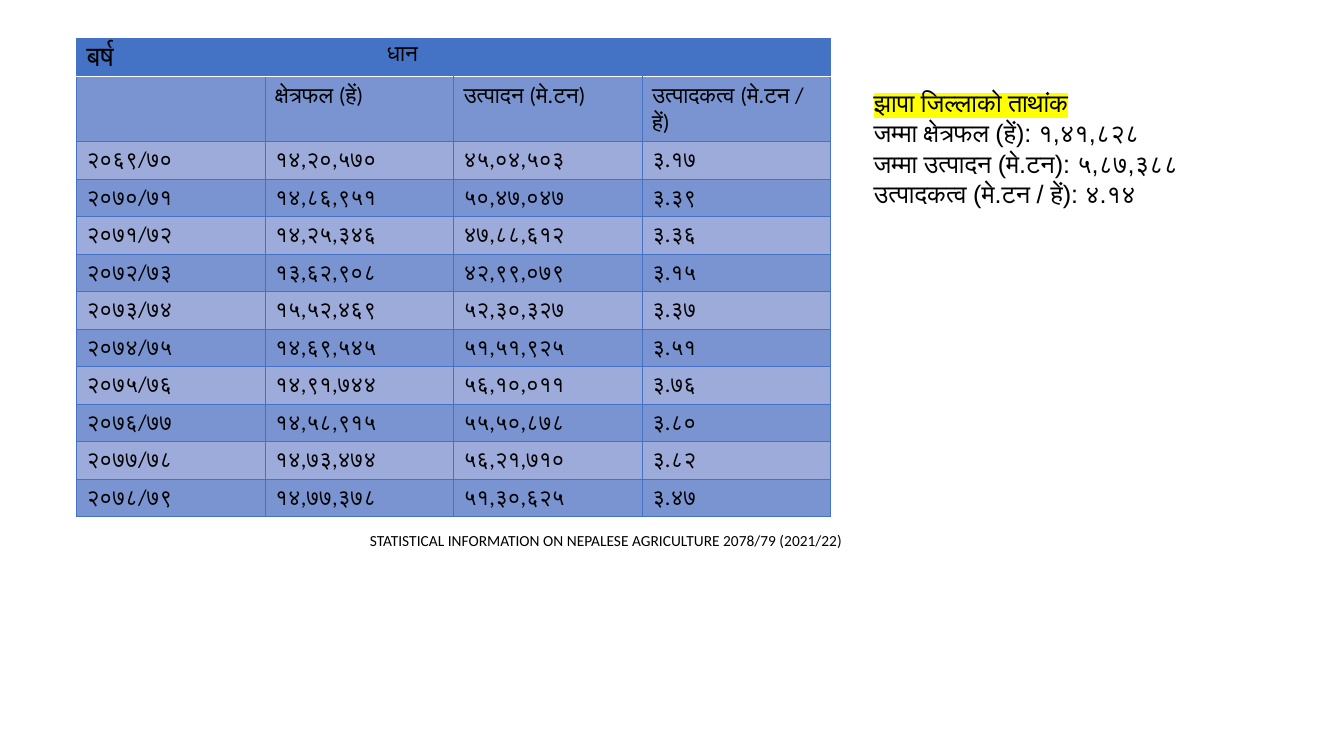
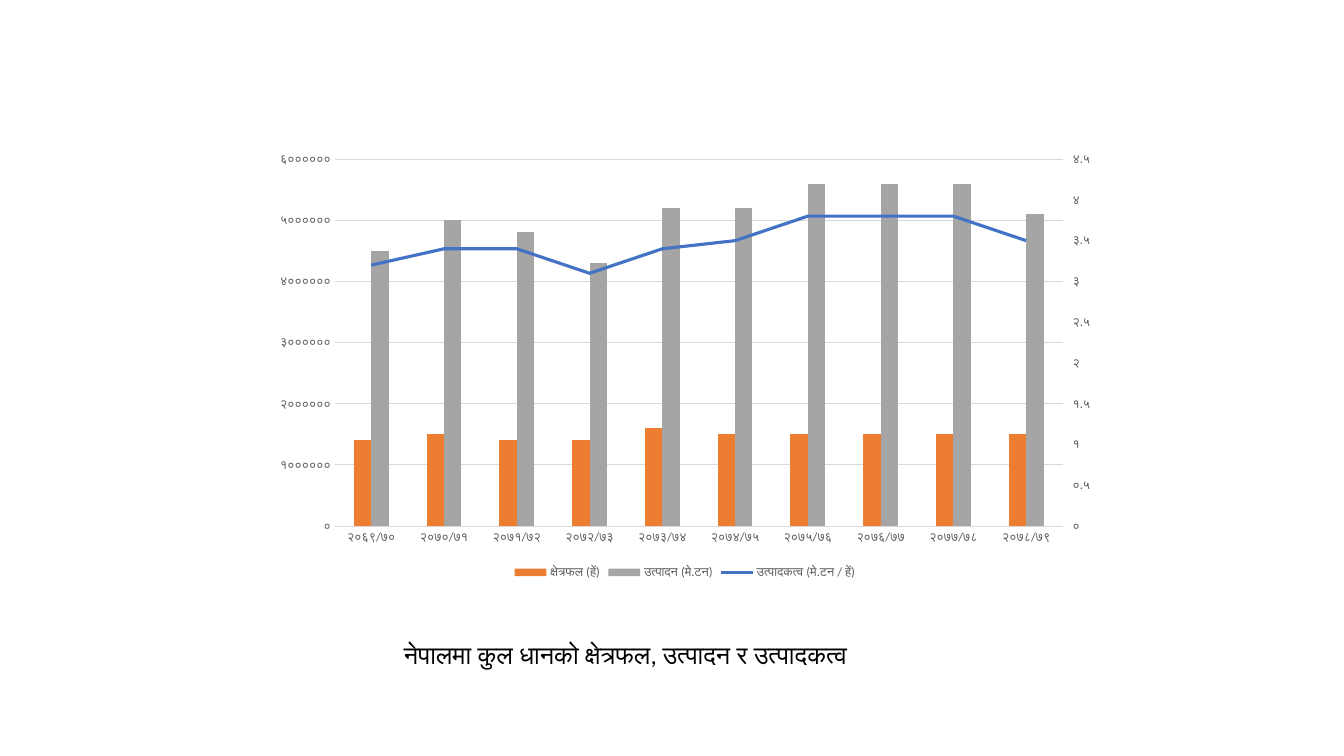
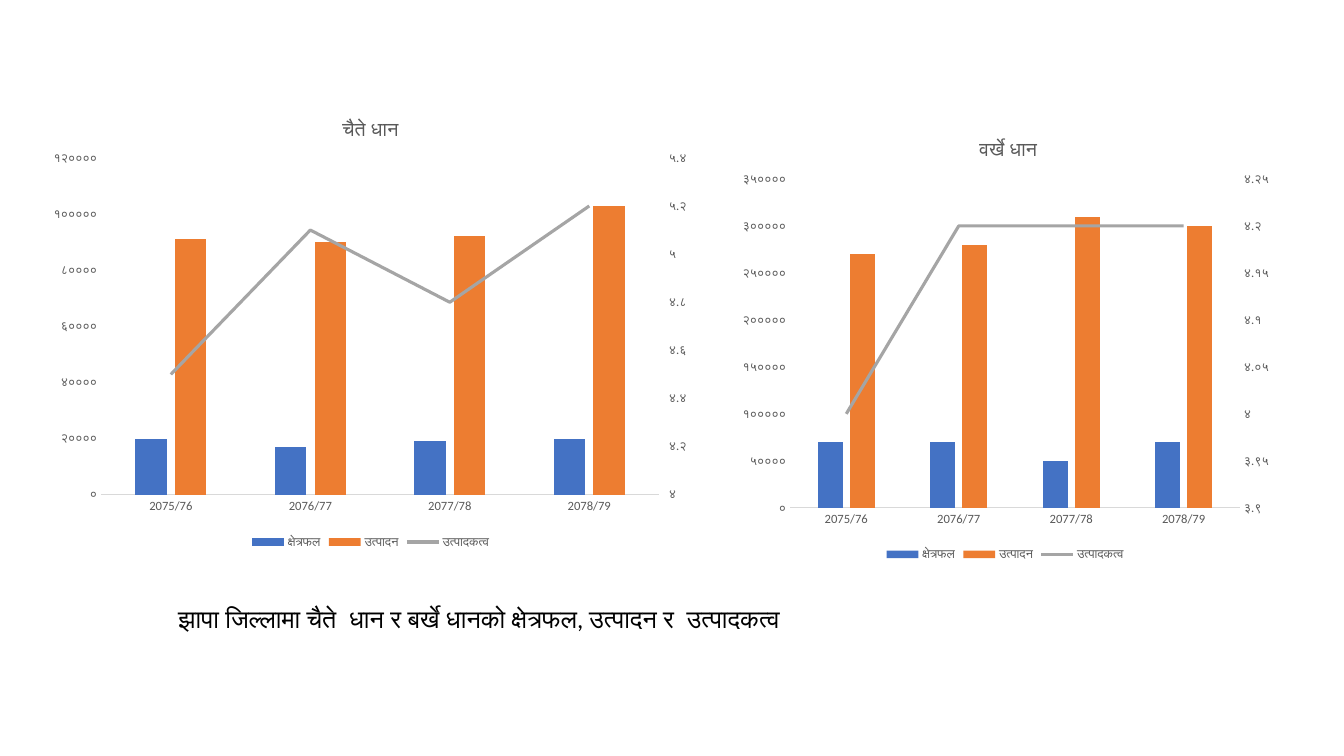
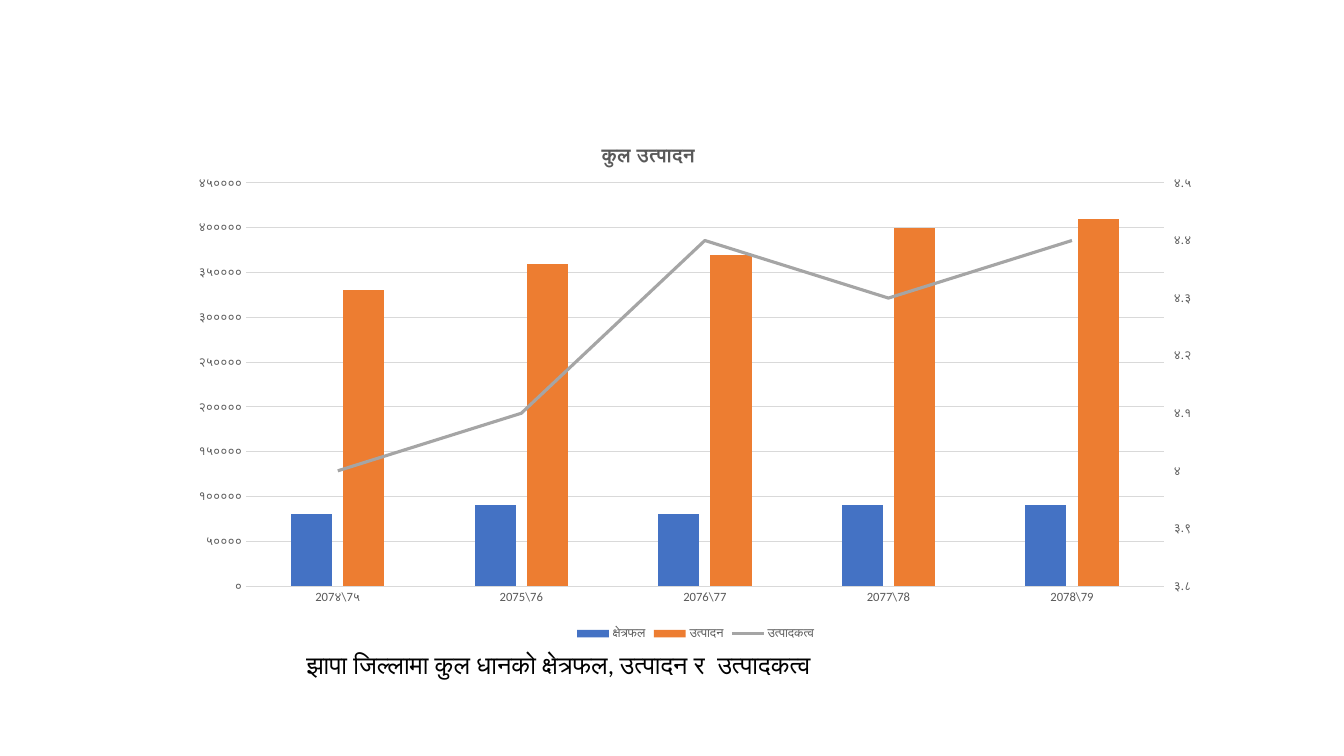
from lxml import etree
from pptx import Presentation
from pptx.chart.axis import ValueAxis
from pptx.chart.data import CategoryChartData
from pptx.dml.color import RGBColor
from pptx.enum.chart import (XL_CHART_TYPE, XL_LEGEND_POSITION, XL_MARKER_STYLE,
                             XL_TICK_LABEL_POSITION, XL_TICK_MARK)
from pptx.enum.text import MSO_AUTO_SIZE
from pptx.oxml import parse_xml
from pptx.oxml.ns import nsdecls, qn
from pptx.util import Cm, Pt

COLUMNS = XL_CHART_TYPE.COLUMN_CLUSTERED
LEGEND_BOTTOM = XL_LEGEND_POSITION.BOTTOM
NO_MARKER = XL_MARKER_STYLE.NONE
LABELS_BESIDE = XL_TICK_LABEL_POSITION.NEXT_TO_AXIS
TICK_NONE, TICK_OUT = XL_TICK_MARK.NONE, XL_TICK_MARK.OUTSIDE
GROW = MSO_AUTO_SIZE.SHAPE_TO_FIT_TEXT

COLORS = {
    "text": "000000", "label": "595959", "rule": "D9D9D9", "white": "FFFFFF",
    "highlight": "FFFF00", "blue": "4472C4", "orange": "ED7D31", "gray": "A5A5A5",
    "band": "7994D1", "plain": "9DABDA",
}
BODY = {"name": "Calibri", "size": Pt(18), "color": "text"}
SOURCE = {**BODY, "size": Pt(11)}
FACTS = {**BODY, "name": "Arial"}
CELL = {**BODY, "size": Pt(16), "bold": False}
CORNER = {**CELL, "size": Pt(20)}
CHART = {**BODY, "size": Pt(10)}
LABEL = {**BODY, "size": Pt(9), "color": "label"}
TITLE = {**LABEL, "size": Pt(14), "bold": False}

NEPALI_WHOLE = "[$-4000439]0"
NEPALI_GENERAL = "[$-4000439]General"
SECOND_AXES = """
<c:plotArea {ns}>
  <c:lineChart>
    <c:grouping val="standard"/><c:varyColors val="0"/>
    <c:marker val="1"/><c:axId val="5001"/><c:axId val="5002"/>
  </c:lineChart>
  <c:valAx>
    <c:axId val="5002"/><c:scaling><c:orientation val="minMax"/></c:scaling>
    <c:delete val="0"/><c:axPos val="r"/><c:crossAx val="5001"/>
    <c:crosses val="max"/><c:crossBetween val="between"/>
  </c:valAx>
  <c:catAx>
    <c:axId val="5001"/><c:scaling><c:orientation val="minMax"/></c:scaling>
    <c:delete val="1"/><c:axPos val="b"/><c:crossAx val="5002"/>
    <c:crosses val="autoZero"/>
  </c:catAx>
</c:plotArea>"""

TABLE_HEAD = ["", "क्षेत्रफल (हें)", "उत्पादन (मे.टन)", "उत्पादकत्व (मे.टन / हें)"]
TABLE_ROWS = [
    ["२०६९/७०", "१४,२०,५७०", "४५,०४,५०३", "३.१७"],
    ["२०७०/७१", "१४,८६,९५१", "५०,४७,०४७", "३.३९"],
    ["२०७१/७२", "१४,२५,३४६", "४७,८८,६१२", "३.३६"],
    ["२०७२/७३", "१३,६२,९०८", "४२,९९,०७९", "३.१५"],
    ["२०७३/७४", "१५,५२,४६९", "५२,३०,३२७", "३.३७"],
    ["२०७४/७५", "१४,६९,५४५", "५१,५१,९२५", "३.५१"],
    ["२०७५/७६", "१४,९१,७४४", "५६,१०,०११", "३.७६"],
    ["२०७६/७७", "१४,५८,९१५", "५५,५०,८७८", "३.८०"],
    ["२०७७/७८", "१४,७३,४७४", "५६,२१,७१०", "३.८२"],
    ["२०७८/७९", "१४,७७,३७८", "५१,३०,६२५", "३.४७"],
]
MEASURES = ["क्षेत्रफल", "उत्पादन", "उत्पादकत्व"]
JHAPA_YEARS = ["2075/76", "2076/77", "2077/78", "2078/79"]
JHAPA_COLORS = ["blue", "orange", "gray"]


def rgb(name):
    return RGBColor.from_string(COLORS[name])


def set_font(font, style):
    for key, value in style.items():
        if key == "color":
            font.color.rgb = rgb(value)
        else:
            setattr(font, key, value)


def set_border(cell, side, color, width):
    """Draw one side (L, R, T or B) of a table cell; call before filling it."""
    cell._tc.get_or_add_tcPr().append(parse_xml(
        f'<a:ln{side} {nsdecls("a")} w="{Pt(width)}"><a:solidFill>'
        f'<a:srgbClr val="{COLORS[color]}"/></a:solidFill></a:ln{side}>'))


def manual_layout(target="", **fractions):
    edges = "".join(f'<c:{key}Mode val="edge"/>' for key in "xy")
    values = "".join(f'<c:{key} val="{value:.4f}"/>' for key, value in fractions.items())
    return parse_xml(f'<c:layout {nsdecls("c")}><c:manualLayout>{target}{edges}{values}'
                     '</c:manualLayout></c:layout>')


def remove_children(parent, tag):
    for child in parent.findall(qn(tag)):
        parent.remove(child)


class Deck:
    def __init__(self):
        self.file = Presentation()
        self.file.slide_width, self.file.slide_height = Cm(33.87), Cm(19.05)
        self.page = None

    def new_page(self):
        self.page = self.file.slides.add_slide(self.file.slide_layouts[6])

    def text(self, place, lines, style=BODY, highlight_first=False):
        box = self.page.shapes.add_textbox(*map(Cm, place))
        frame = box.text_frame
        frame.word_wrap = True
        frame.auto_size = GROW
        for index, line in enumerate(lines):
            para = frame.paragraphs[0] if index == 0 else frame.add_paragraph()
            span = para.add_run()
            span.text = line
            set_font(span.font, style)
            if highlight_first and index == 0:
                mark = etree.Element(qn("a:highlight"))
                etree.SubElement(mark, qn("a:srgbClr"), val=COLORS["highlight"])
                span.font._element.find(qn("a:solidFill")).addnext(mark)

    def table(self, place, rows, heights):
        table = self.page.shapes.add_table(len(rows), len(rows[0]), *map(Cm, place)).table
        table.first_row = table.horz_banding = False
        for row, height in zip(table.rows, heights):
            row.height = Cm(height)
        for r, row in enumerate(rows):
            for c, value in enumerate(row):
                cell = table.cell(r, c)
                for side in "LRTB":
                    under_head = (r, side) in ((0, "B"), (1, "T"))
                    set_border(cell, side, *(("white", 1) if under_head else ("blue", 0.5)))
                cell.fill.solid()
                cell.fill.fore_color.rgb = rgb(
                    "blue" if r == 0 else "band" if r % 2 else "plain")
                if value:
                    span = cell.text_frame.paragraphs[0].add_run()
                    span.text = value
                    set_font(span.font, CORNER if (r, c) == (0, 0) else CELL)
        return table

    def axis(self, axis, low, high, step, number_format, tick=TICK_NONE):
        """Style a value axis."""
        scale = {"minimum_scale": low, "maximum_scale": high, "major_unit": step,
                 "major_tick_mark": tick, "minor_tick_mark": TICK_NONE,
                 "tick_label_position": LABELS_BESIDE}
        for key, value in scale.items():
            setattr(axis, key, value)
        labels = axis.tick_labels
        labels.number_format = number_format
        labels.number_format_is_linked = False
        set_font(labels.font, LABEL)
        axis.format.line.fill.background()

    def combined_chart(self, place, plot, years, series, colors, left, right, title=None,
                       title_left=0, bold=False, grid=False, overlap=-27,
                       right_tick=TICK_OUT):
        """Add columns on the left axis with the last series as a line on the right.

        plot and title_left are slide positions in centimetres.
        """
        data = CategoryChartData()
        data.categories = years
        for name, values in series.items():
            data.add_series(name, values)
        chart = self.page.shapes.add_chart(COLUMNS, *map(Cm, place), data).chart
        set_font(chart.font, CHART)
        chart.has_legend = True
        chart.legend.position = LEGEND_BOTTOM
        chart.legend.include_in_layout = False
        set_font(chart.legend.font, LABEL)

        category_axis = chart.category_axis
        category_axis.major_tick_mark = TICK_NONE
        category_axis.format.line.color.rgb = rgb("rule")
        category_axis.format.line.width = Pt(0.75)
        set_font(category_axis.tick_labels.font, LABEL)
        value_axis = chart.value_axis
        self.axis(value_axis, *left, NEPALI_WHOLE)
        value_axis.has_major_gridlines = grid
        if grid:
            line = value_axis.major_gridlines.format.line
            line.color.rgb = rgb("rule")
            line.width = Pt(0.75)

        area = chart._chartSpace.chart.plotArea
        bars = area.find(qn("c:barChart"))
        last = bars.findall(qn("c:ser"))[-1]
        remove_children(last, "c:invertIfNegative")
        line_chart, right_axis, hidden_axis = list(parse_xml(
            SECOND_AXES.format(ns=nsdecls("c"))))
        line_chart.find(qn("c:varyColors")).addnext(last)
        bars.addnext(line_chart)
        area.findall(qn("c:valAx"))[-1].addnext(right_axis)
        right_axis.addnext(hidden_axis)
        self.axis(ValueAxis(right_axis), *right, NEPALI_GENERAL, right_tick)

        columns, lines = chart.plots
        columns.vary_by_categories = False
        columns.gap_width, columns.overlap = 219, overlap
        for column, color in zip(columns.series, colors):
            column.format.fill.solid()
            column.format.fill.fore_color.rgb = rgb(color)
        trend = lines.series[0]
        trend.smooth = False
        trend.marker.style = NO_MARKER
        trend.format.line.color.rgb = rgb(colors[-1])
        trend.format.line.width = Pt(2.25)

        x, y, width, height = place
        remove_children(area, "c:layout")
        area.insert(0, manual_layout(
            '<c:layoutTarget val="inner"/>', x=(plot[0] - x) / width,
            y=(plot[1] - y) / height, w=plot[2] / width, h=plot[3] / height))
        chart.has_title = title is not None
        if title:
            frame = chart.chart_title.text_frame
            frame.text = title
            set_font(frame.paragraphs[0].runs[0].font, {**TITLE, "bold": bold})
            element = chart.chart_title._element
            remove_children(element, "c:layout")
            element.find(qn("c:tx")).addnext(
                manual_layout(x=(title_left - x) / width, y=0.04))


def rice_table(deck):
    deck.new_page()
    rows = [["बर्ष", "धान", "", ""], TABLE_HEAD] + TABLE_ROWS
    heights = [0.96, 1.63] + [0.94] * len(TABLE_ROWS)
    table = deck.table((1.93, 0.97, 19, sum(heights)), rows, heights)
    crop = table.cell(0, 1)
    crop.merge(table.cell(0, 3))
    crop.margin_left = Cm(3.07)
    deck.text((9.07, 13.26, 12.7, 0.74),
              ["STATISTICAL INFORMATION ON NEPALESE AGRICULTURE 2078/79 (2021/22)"], SOURCE)
    deck.text((21.77, 2.08, 10.16, 3.33),
              ["झापा जिल्लाको ताथांक", "जम्मा क्षेत्रफल (हें): १,४१,८२८",
               "जम्मा उत्पादन (मे.टन): ५,८७,३८८", "उत्पादकत्व (मे.टन / हें): ४.१४"],
              FACTS, highlight_first=True)


def nepal_chart(deck):
    deck.new_page()
    values = [
        [1400000, 1500000, 1400000, 1400000, 1600000,
         1500000, 1500000, 1500000, 1500000, 1500000],
        [4500000, 5000000, 4800000, 4300000, 5200000,
         5200000, 5600000, 5600000, 5600000, 5100000],
        [3.2, 3.4, 3.4, 3.1, 3.4, 3.5, 3.8, 3.8, 3.8, 3.5],
    ]
    deck.combined_chart(
        (6.63, 3.61, 21.26, 11.1), (8.44, 4.01, 18.34, 9.25),
        [row[0] for row in TABLE_ROWS], dict(zip(TABLE_HEAD[1:], values)),
        ["orange", "gray", "blue"], (0, 6000000, 1000000), (0, 4.5, 0.5),
        grid=True, overlap=0)
    deck.text((9.93, 15.98, 14.22, 1.02),
              ["नेपालमा कुल धानको क्षेत्रफल, उत्पादन र उत्पादकत्व"])


def jhapa_seasons(deck):
    deck.new_page()
    spring = [[20000, 17000, 19000, 20000], [91000, 90000, 92000, 103000],
              [4.5, 5.1, 4.8, 5.2]]
    monsoon = [[70000, 70000, 50000, 70000], [270000, 280000, 310000, 300000],
               [4, 4.2, 4.2, 4.2]]
    deck.combined_chart(
        (1.02, 2.44, 16.64, 11.48), (2.55, 3.98, 14.06, 8.49), JHAPA_YEARS,
        dict(zip(MEASURES, spring)), JHAPA_COLORS, (0, 120000, 20000), (4, 5.4, 0.2),
        title="चैते धान", title_left=8.54)
    deck.combined_chart(
        (18.42, 2.95, 13.82, 11.28), (19.91, 4.51, 11.34, 8.29), JHAPA_YEARS,
        dict(zip(MEASURES, monsoon)), JHAPA_COLORS, (0, 350000, 50000), (3.9, 4.25, 0.05),
        title="वर्खे धान", title_left=24.59, right_tick=TICK_NONE)
    deck.text((4.24, 15.09, 23.72, 1.02),
              ["झापा जिल्लामा चैते  धान र बर्खे धानको क्षेत्रफल, उत्पादन र  उत्पादकत्व"])


def jhapa_total(deck):
    deck.new_page()
    values = [[80000, 90000, 80000, 90000, 90000],
              [330000, 360000, 370000, 400000, 410000], [4, 4.1, 4.4, 4.3, 4.4]]
    deck.combined_chart(
        (4.5, 3.02, 26.06, 13.21), (6.2, 4.61, 23.13, 10.16),
        ["207४\\7५", "2075\\76", "2076\\77", "2077\\78", "2078\\79"],
        dict(zip(MEASURES, values)), JHAPA_COLORS, (0, 450000, 50000), (3.8, 4.5, 0.1),
        title="कुल उत्पादन", title_left=15.07, bold=True, grid=True)
    deck.text((7.47, 16.23, 23.7, 1.8),
              ["झापा जिल्लामा कुल धानको क्षेत्रफल, उत्पादन र  उत्पादकत्व"])


def main():
    deck = Deck()
    for build in (rice_table, nepal_chart, jhapa_seasons, jhapa_total):
        build(deck)
    deck.file.save("out.pptx")


if __name__ == "__main__":
    main()
